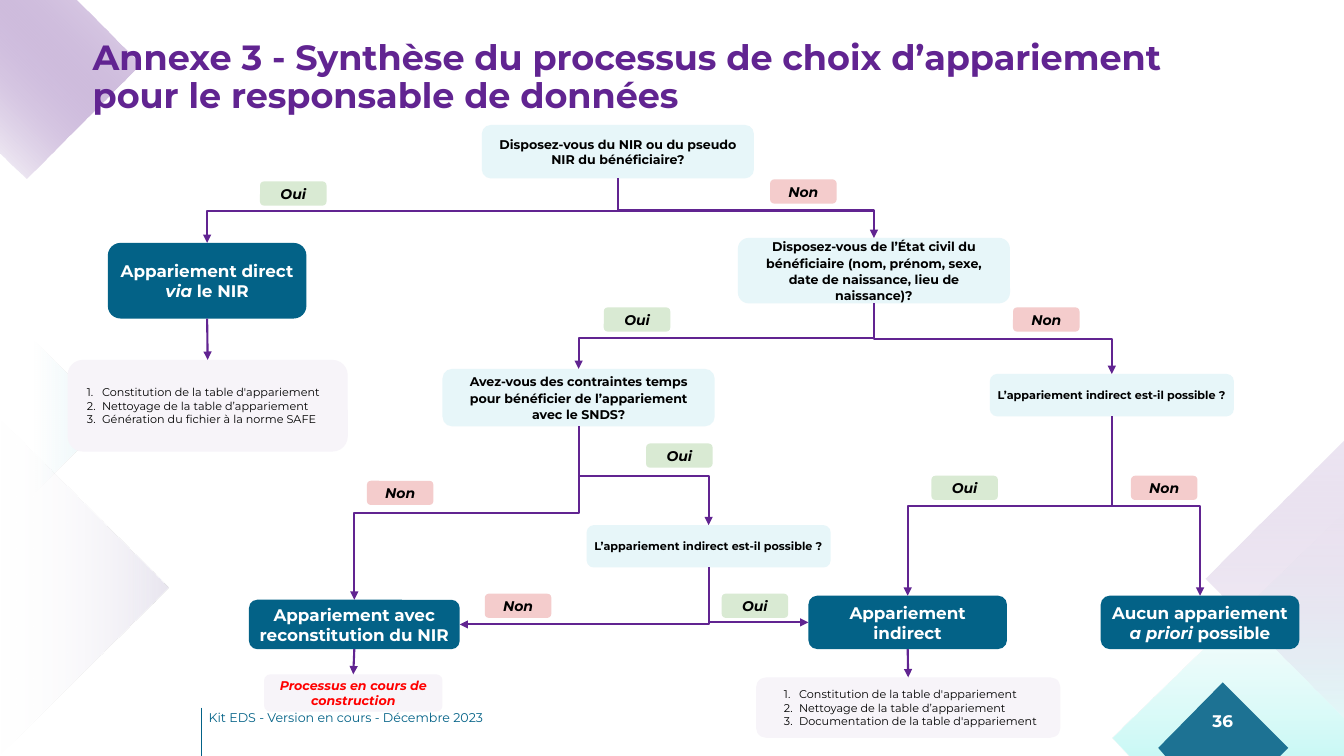
from lxml import etree
from pptx import Presentation
from pptx.dml.color import RGBColor
from pptx.enum.shapes import MSO_CONNECTOR, MSO_SHAPE
from pptx.enum.text import MSO_ANCHOR, MSO_AUTO_SIZE, PP_ALIGN
from pptx.oxml.ns import qn
from pptx.util import Emu, Inches, Pt

COLORS = {
    "purple": "612491", "blue": "036287", "badge": "1D7293", "question": "E7F6F9",
    "note": "F7F4F9", "yes": "D9EAD3", "no": "F4CCCC", "black": "000000",
    "white": "FFFFFF", "red": "FF0000", "cyan": "5DEEE3", "mist": "F5F7FC", "lilac": "E9E6F0",
}
CELL = Inches(0.1)
COLUMNS, ROWS = 133.33, 75
TOP, LEFT, BOTTOM, RIGHT = range(4)


def cells(*values):
    return [Emu(round(value * CELL)) for value in values]


class FlowchartSlide:
    """Draws decision-tree elements on one slide, placed on a grid of tenth-inch cells."""

    font_name = "Montserrat"

    def __init__(self, presentation):
        self.slide = presentation.slides.add_slide(presentation.slide_layouts[5])
        self.shapes = self.slide.shapes

    def color(self, name):
        return RGBColor.from_string(COLORS[name])

    def fill_text(self, shape, paragraphs, size, color, bold=True, italic=False, inset=0.0,
                  align=PP_ALIGN.CENTER, anchor=MSO_ANCHOR.MIDDLE, spacing=None,
                  number_indent=None):
        frame = shape.text_frame
        frame.word_wrap = True
        frame.auto_size = MSO_AUTO_SIZE.NONE
        frame.vertical_anchor = anchor
        frame.margin_left = frame.margin_right = Inches(inset)
        frame.margin_top = frame.margin_bottom = Inches(inset)
        for index, runs in enumerate(paragraphs):
            paragraph = frame.paragraphs[0] if index == 0 else frame.add_paragraph()
            paragraph.alignment = align
            if spacing:
                paragraph.line_spacing = spacing
            if number_indent:
                self.number(paragraph, number_indent)
            for text, slanted in [(runs, italic)] if isinstance(runs, str) else runs:
                run = paragraph.add_run()
                run.text = text
                run.font.name = self.font_name
                run.font.size = Pt(size)
                run.font.bold = bold
                run.font.italic = slanted
                run.font.color.rgb = self.color(color)

    def number(self, paragraph, indent):
        properties = paragraph._p.get_or_add_pPr()
        properties.set("marL", str(Inches(indent)))
        properties.set("indent", str(Inches(-0.15)))
        bullet_color = etree.SubElement(properties, qn("a:buClr"))
        etree.SubElement(bullet_color, qn("a:srgbClr"), val=COLORS["black"])
        etree.SubElement(properties, qn("a:buAutoNum"), type="arabicPeriod")

    def title(self, text, *place):
        shape = self.shapes.title
        shape.left, shape.top, shape.width, shape.height = cells(*place)
        self.fill_text(shape, [text], 25, "purple", align=PP_ALIGN.LEFT,
                       anchor=MSO_ANCHOR.TOP, spacing=0.9)
        shape._element.getparent().append(shape._element)

    def text(self, text, place, size, color, **style):
        self.fill_text(self.shapes.add_textbox(*cells(*place)), [text], size, color, **style)

    def box(self, place, fill, paragraphs, size, color="black", **style):
        shape = self.shapes.add_shape(MSO_SHAPE.ROUNDED_RECTANGLE, *cells(*place))
        shape.shadow.inherit = False
        shape.fill.solid()
        shape.fill.fore_color.rgb = self.color(fill)
        shape.line.fill.background()
        self.fill_text(shape, paragraphs, size, color, **style)
        return shape

    def question(self, place, text, spacing=None):
        return self.box(place, "question", [text], 9, inset=0.13, spacing=spacing)

    def indirect_question(self, column, row):
        return self.box((column, row, 24.2, 4.2), "question",
                        ["L’appariement indirect est-il possible ?"], 8, inset=0.05)

    def outcome(self, place, *paragraphs):
        return self.box(place, "blue", paragraphs, 12, "white", inset=0.05)

    def steps(self, place, items, indent):
        return self.box(place, "note", items, 8, bold=False, inset=0.1,
                        align=PP_ALIGN.LEFT, number_indent=indent)

    def answer(self, fill, column, row):
        label = {"yes": "Oui", "no": "Non"}[fill]
        self.box((column, row, 6.6, 2.4), fill, [label], 10, italic=True, inset=0.13)

    def polygon(self, points, stops, angle=None):
        builder = self.shapes.build_freeform(*cells(*points[0]), scale=1.0)
        builder.add_line_segments([cells(*point) for point in points[1:]], close=True)
        shape = builder.convert_to_shape()
        shape.shadow.inherit = False
        shape.line.fill.background()
        if angle is None:
            shape.fill.solid()
            shape.fill.fore_color.rgb = self.color(stops)
            return
        shape.fill.gradient()
        gradient = shape._element.spPr.find(qn("a:gradFill"))
        stop_list = gradient.find(qn("a:gsLst"))
        for stop in list(stop_list):
            stop_list.remove(stop)
        for position, name, opacity in stops:
            stop = etree.SubElement(stop_list, qn("a:gs"), pos=str(position * 1000))
            stop_color = etree.SubElement(stop, qn("a:srgbClr"), val=COLORS[name])
            etree.SubElement(stop_color, qn("a:alpha"), val=str(opacity * 1000))
        gradient.find(qn("a:lin")).set("ang", str(angle * 60000))

    def style_line(self, connector, color="purple", width=1.5, arrow=True):
        connector.line.color.rgb = self.color(color)
        connector.line.width = Pt(width)
        if arrow:
            etree.SubElement(connector.line._get_or_add_ln(), qn("a:tailEnd"), type="triangle")
        etree.SubElement(connector._element.spPr, qn("a:effectLst"))

    def rule(self, color, *ends):
        connector = self.shapes.add_connector(MSO_CONNECTOR.STRAIGHT, *cells(*ends))
        self.style_line(connector, color, 1, arrow=False)

    def join(self, kind, parent, child, side):
        connector = self.shapes.add_connector(kind, 0, 0, 0, 0)
        connector.begin_connect(parent, BOTTOM)
        connector.end_connect(child, side)
        return connector

    def arrow(self, parent, child):
        self.style_line(self.join(MSO_CONNECTOR.STRAIGHT, parent, child, TOP))

    def branch(self, parent, child, bend=0.5, side=TOP):
        connector = self.join(MSO_CONNECTOR.ELBOW, parent, child, side)
        x1, y1 = connector.begin_x, connector.begin_y
        x2, y2 = connector.end_x, connector.end_y
        across, down = abs(x2 - x1), y2 - y1
        connector.left, connector.top = (x1 + x2 - down) // 2, (y1 + y2 - across) // 2
        connector.width, connector.height = down, across
        properties = connector._element.spPr
        transform = properties.get_or_add_xfrm()
        transform.set("rot", str((90 if x2 < x1 else 270) * 60000))
        transform.set("flipH", "0" if x2 < x1 else "1")
        transform.set("flipV", "0")
        geometry = properties.find(qn("a:prstGeom"))
        if side == TOP:
            etree.SubElement(geometry.find(qn("a:avLst")), qn("a:gd"), name="adj1",
                             fmla=f"val {round(bend * 100000)}")
        else:
            geometry.set("prst", "bentConnector2")
        self.style_line(connector)


def draw_background(page):
    page.text("Kit EDS - Version en cours - Décembre 2023", (20.7, 70.2, 43.3, 2), 9, "blue",
              bold=False, align=PP_ALIGN.LEFT)
    page.polygon([(0, 0), (7.5, 0), (13.9, 6.4), (2.6, 17.7), (0, 15.2)],
                 [(0, "note", 100), (100, "purple", 15)], 315)
    page.polygon([(112.1, ROWS), (COLUMNS, ROWS), (COLUMNS, 50.8), (110.4, 73.2)],
                 [(0, "mist", 0), (99, "cyan", 32), (100, "cyan", 32)], 90)
    page.polygon([(115.6, ROWS), (127, ROWS), (127.8, 74.2), (121.3, 67.7), (114.9, 74.2)], "badge")
    page.polygon([(COLUMNS, 43.7), (COLUMNS, 71.2), (119.6, 57.4)],
                 [(0, "purple", 12), (100, "note", 32)], 90)
    page.polygon([(0, 30.4), (11, 41.3), (0, 52.3)],
                 [(0, "question", 100), (69, "question", 0), (100, "question", 0)], 180)
    page.polygon([(0, 41.5), (16.7, 58.3), (0, ROWS)],
                 [(0, "lilac", 100), (99, "white", 0), (100, "white", 0)], 180)
    page.rule("blue", 20, 70.2, 20, ROWS)
    page.text("36", (118.5, 69.5, 5.6, 4), 12, "white", inset=0.05)


def draw_tree(page):
    has_nir = page.question((47.8, 12.4, 27, 5.3),
                            "Disposez-vous du NIR ou du pseudo NIR du bénéficiaire?")
    has_identity = page.question(
        (73.2, 23.6, 27, 6.5), "Disposez-vous de l’État civil du bénéficiaire (nom, prénom, "
        "sexe, date de naissance, lieu de naissance)?", 1.08)
    has_deadline = page.question(
        (43.9, 36.6, 27, 5.7), "Avez-vous des contraintes temps pour bénéficier de "
        "l’appariement avec le SNDS?", 1.08)
    indirect_right = page.indirect_question(98.2, 37.1)
    indirect_middle = page.indirect_question(58.2, 52.1)
    direct = page.outcome((10.7, 24.1, 19.7, 7.5),
                          [("Appariement direct ", False), ("via", True), (" le NIR", False)])
    rebuilt = page.outcome((24.7, 59.5, 20.9, 4.9), "Appariement avec reconstitution du NIR")
    indirect = page.outcome((80.2, 59.1, 19.7, 5.3), "Appariement indirect")
    impossible = page.outcome((109.2, 59.1, 19.7, 5.3), [
        ("Aucun appariement ", False), ("a priori", True), (" possible", False)])
    pending = page.box((26.2, 66.9, 17.7, 3.7), "note", ["Processus en cours de construction"],
                       9, "red", italic=True, inset=0.1)
    first_steps = ["Constitution de la table d'appariement", "Nettoyage de la table d’appariement"]
    direct_steps = page.steps((6.7, 35.7, 27.8, 9.1),
                              first_steps + ["Génération du fichier à la norme SAFE"], 0.2)
    indirect_steps = page.steps((75, 67.2, 30.2, 6),
                                first_steps + ["Documentation de la table d'appariement"], 0.3)

    for parent, child, bend in [
            (has_nir, direct, 0.5), (has_nir, has_identity, 0.54),
            (has_identity, has_deadline, 0.53), (has_identity, indirect_right, 0.5),
            (has_deadline, rebuilt, 0.5), (has_deadline, indirect_middle, 0.5),
            (indirect_right, indirect, 0.5), (indirect_right, impossible, 0.5)]:
        page.branch(parent, child, bend)
    page.branch(indirect_middle, rebuilt, side=RIGHT)
    page.branch(indirect_middle, indirect, side=LEFT)
    for parent, child in [(direct, direct_steps), (rebuilt, pending), (indirect, indirect_steps)]:
        page.arrow(parent, child)

    for column, row in [(25.8, 18), (59.9, 30.5), (64.1, 44), (92.4, 47.2), (71.6, 58.9)]:
        page.answer("yes", column, row)
    for column, row in [(76.4, 17.8), (100.5, 30.5), (36.4, 47.7), (112.2, 47.2), (48.1, 58.9)]:
        page.answer("no", column, row)


def main():
    presentation = Presentation()
    presentation.slide_width, presentation.slide_height = cells(COLUMNS, ROWS)
    page = FlowchartSlide(presentation)
    draw_background(page)
    page.title("Annexe 3 - Synthèse du processus de choix d’appariement pour le responsable "
               "de données", 9.2, 4, 115, 8.5)
    draw_tree(page)
    presentation.save("out.pptx")


if __name__ == "__main__":
    main()
